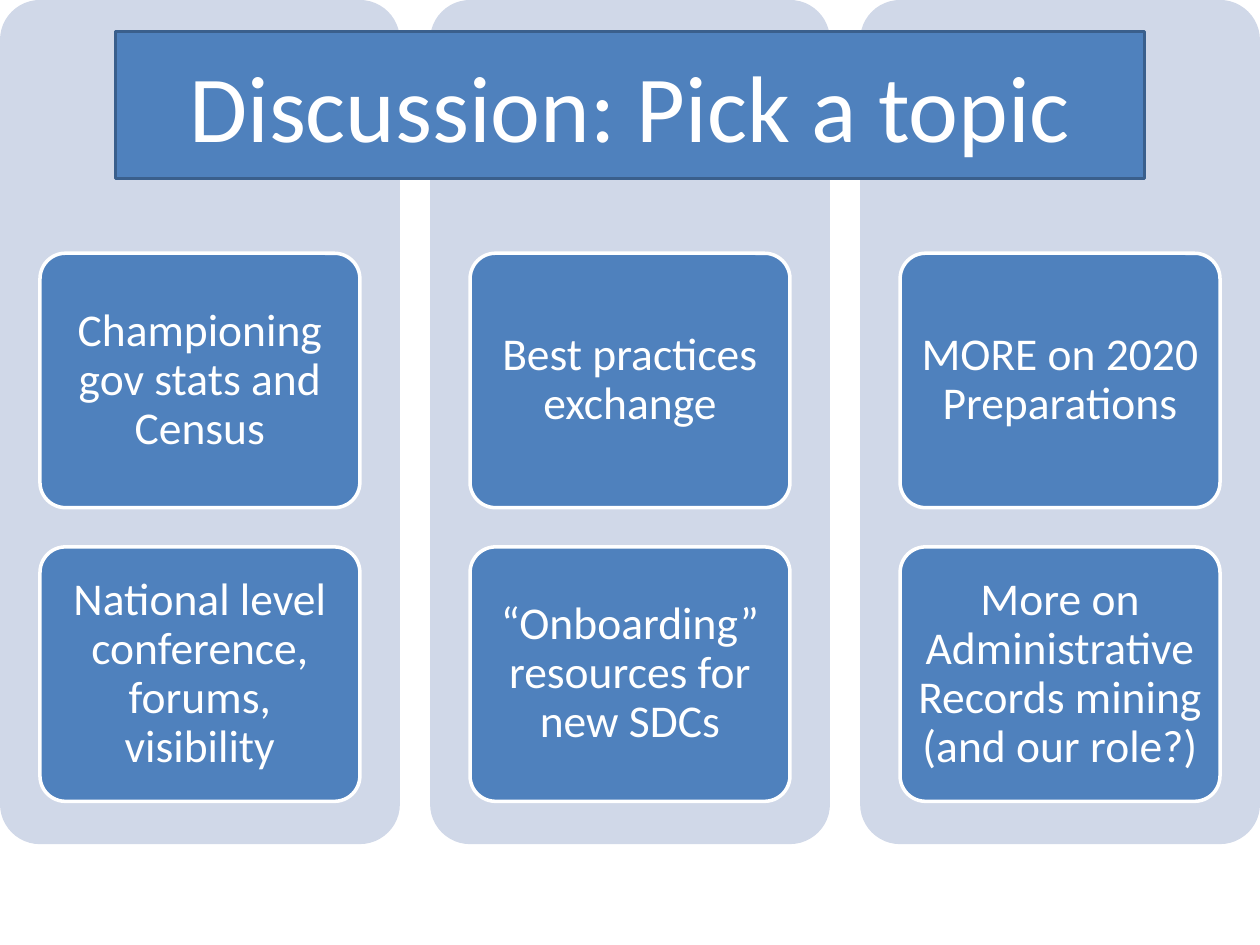
"""Build the discussion slide: three panels of topic cards under a title bar."""
from dataclasses import dataclass

import pptx
import pptx.dml.color
import pptx.enum.shapes
import pptx.enum.text
import pptx.util

Pt = pptx.util.Pt
RGB = pptx.dml.color.RGBColor.from_string


@dataclass(frozen=True)
class Theme:
    panel: str = "D0D8E8"
    card: str = "4F81BD"
    edge: str = "3A5F8C"
    white: str = "FFFFFF"
    font: str = "Calibri"
    head: float = 54
    body: float = 26
    line: float = 2


@dataclass(frozen=True)
class Box:
    left: float
    top: float
    width: float
    height: float


@dataclass(frozen=True)
class Panel:
    box: Box
    topics: tuple[str, ...]


THEME = Theme()
WIDTH, HEIGHT = 720, 540
GAP = 17.25
SPAN = (WIDTH - 2 * GAP) / 3
TALL = 482.4
CARD = 145.4
STEP = 167.8
TOPICS = (
    ("Championing gov stats and Census",
     "National level conference, forums, visibility"),
    ("Best practices exchange",
     "“Onboarding” resources for new SDCs"),
    ("MORE on 2020 Preparations",
     "More on Administrative Records mining (and our role?)"),
)


def paint(shape, fill: str, line: str | None = None) -> None:
    """Set the fill and the outline of a shape."""
    shape.fill.solid()
    shape.fill.fore_color.rgb = RGB(fill)
    if line is None:
        shape.line.fill.background()
    else:
        shape.line.color.rgb = RGB(line)
        shape.line.width = Pt(THEME.line)


def write(shape, text: str, size: float, lead: float = 1.0) -> None:
    """Write one centred white run in the middle of a shape."""
    frame = shape.text_frame
    frame.word_wrap = True
    frame.auto_size = pptx.enum.text.MSO_AUTO_SIZE.NONE
    frame.vertical_anchor = pptx.enum.text.MSO_ANCHOR.MIDDLE
    para = frame.paragraphs[0]
    para.alignment = pptx.enum.text.PP_ALIGN.CENTER
    para.line_spacing = lead
    run = para.add_run()
    run.text = text
    run.font.name = THEME.font
    run.font.size = Pt(size)
    run.font.color.rgb = RGB(THEME.white)


def place(shape, box: Box) -> None:
    """Move and size a shape."""
    shape.left, shape.top = Pt(box.left), Pt(box.top)
    shape.width, shape.height = Pt(box.width), Pt(box.height)


def add_round(slide, box: Box, fill: str, line: str | None = None):
    """Add a rounded box without a shadow."""
    kind = pptx.enum.shapes.MSO_SHAPE.ROUNDED_RECTANGLE
    shape = slide.shapes.add_shape(kind, 0, 0, 0, 0)
    place(shape, box)
    shape.adjustments[0] = 0.1
    shape.shadow.inherit = False
    paint(shape, fill, line)
    return shape


def add_card(slide, box: Box, topic: str) -> None:
    """Add one topic card."""
    card = add_round(slide, box, THEME.card, THEME.white)
    frame = card.text_frame
    frame.margin_left = frame.margin_right = Pt(5)
    frame.margin_top = frame.margin_bottom = Pt(3.75)
    write(card, topic, THEME.body, 0.9)


def add_panel(slide, panel: Panel) -> None:
    """Add a panel and the cards stacked on it."""
    box = panel.box
    add_round(slide, box, THEME.panel)
    for row, topic in enumerate(panel.topics):
        spot = Box(box.left + 0.1 * box.width, 0.3 * box.height + row * STEP,
                   0.8 * box.width, CARD)
        add_card(slide, spot, topic)


def add_title(slide, box: Box, text: str) -> None:
    """Turn the title placeholder into a bar in front of the panels."""
    title = slide.shapes.title
    place(title, box)
    paint(title, THEME.card, THEME.edge)
    write(title, text, THEME.head)
    title.element.getparent().append(title.element)


def main() -> None:
    """Build and save the deck."""
    deck = pptx.Presentation()
    deck.slide_width, deck.slide_height = Pt(WIDTH), Pt(HEIGHT)
    slide = deck.slides.add_slide(deck.slide_layouts.get_by_name("Title Only"))
    for col, topics in enumerate(TOPICS):
        add_panel(slide, Panel(Box(col * (SPAN + GAP), 0, SPAN, TALL), topics))
    add_title(slide, Box(66, 18, 588, 84), "Discussion: Pick a topic")
    deck.save("out.pptx")


if __name__ == "__main__":
    main()
